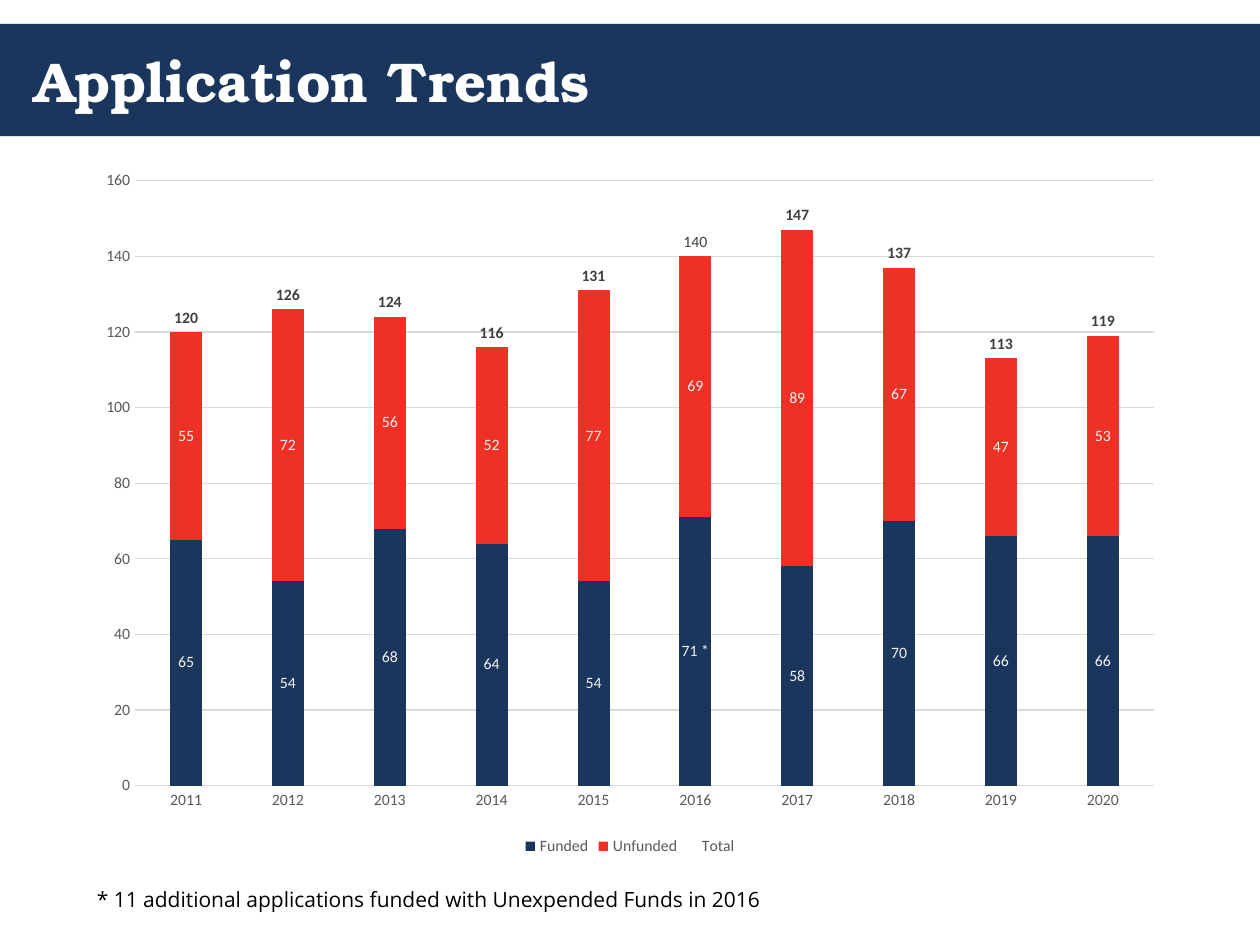
from dataclasses import dataclass

from lxml import etree
from pptx import Presentation
from pptx import util as u
from pptx.chart.data import CategoryChartData
from pptx.dml.color import RGBColor
from pptx.enum import chart as ch, shapes, text
from pptx.oxml import ns


@dataclass(frozen=True)
class Theme:
    """Colours, fonts and type sizes of the slide."""
    navy: str = "1B365D"
    red: str = "EE3124"
    white: str = "FFFFFF"
    black: str = "000000"
    pale: str = "F2F2F2"
    axis: str = "595959"
    total: str = "404040"
    grid: str = "D9D9D9"
    title_font: str = "TeX Gyre Bonum"
    note_font: str = "Open Sans"
    chart_font: str = "Calibri"
    title_size: int = 32
    note_size: int = 12
    chart_size: int = 10
    label_size: int = 9


T = Theme()
YEARS = [str(year) for year in range(2011, 2021)]
FUNDED = [65, 54, 68, 64, 54, 71, 58, 70, 66, 66]
UNFUNDED = [55, 72, 56, 52, 77, 69, 89, 67, 47, 53]
TOTAL = [f + n for f, n in zip(FUNDED, UNFUNDED)]
NOTED = YEARS.index("2016")


def style(font, name, size, color, bold=False):
    """Set the face, size, colour and weight of a font."""
    font.name, font.size, font.bold = name, u.Pt(size), bold
    font.color.rgb = RGBColor.from_string(color)


def rule(line, color):
    """Give a chart line its colour and hairline width."""
    line.color.rgb = RGBColor.from_string(color)
    line.width = u.Pt(0.75)


def write(tf, words, *look):
    """Fill the first paragraph of a text frame with one styled run."""
    p = tf.paragraphs[0]
    p.alignment = text.PP_ALIGN.LEFT
    r = p.add_run()
    r.text = words
    style(r.font, *look)


def add_header(s, x, y, w, h):
    """Place the title over a full-width band."""
    band = s.shapes.add_shape(shapes.MSO_SHAPE.RECTANGLE, x, y, w, h)
    band.shadow.inherit = False
    band.fill.solid()
    band.fill.fore_color.rgb = RGBColor.from_string(T.navy)
    band.line.fill.background()
    title = s.shapes.title
    title._element.addprevious(band._element)
    inset = u.Inches(0.17)
    title.left, title.top, title.width, title.height = x + inset, y, w - 2 * inset, h
    title.text_frame.vertical_anchor = text.MSO_ANCHOR.MIDDLE
    write(title.text_frame, "Application Trends", T.title_font, T.title_size, T.white, True)


def move_last_series_to_line(chart):
    """Turn the last column series into a line on the same axes."""
    bar = chart._chartSpace.find(".//" + ns.qn("c:barChart"))
    ser = bar.findall(ns.qn("c:ser"))[-1]
    for flag in ser.findall(ns.qn("c:invertIfNegative")):
        ser.remove(flag)
    line = bar.makeelement(ns.qn("c:lineChart"))
    bar.addnext(line)
    etree.SubElement(line, ns.qn("c:grouping"), val="standard")
    etree.SubElement(line, ns.qn("c:varyColors"), val="0")
    line.append(ser)
    etree.SubElement(line, ns.qn("c:marker"), val="1")
    for axis in bar.findall(ns.qn("c:axId")):
        etree.SubElement(line, ns.qn("c:axId"), val=axis.get("val"))


def label_series(series, position, color, bold, note=None):
    """Show the values of a series, with special wording for the noted year."""
    labels = series.data_labels
    labels.show_value = True
    labels.position = position
    style(labels.font, T.chart_font, T.label_size, color, bold)
    if note:
        label = series.points[NOTED].data_label
        write(label.text_frame, note, T.chart_font, T.label_size, color)
        label.position = position


def format_axes(chart):
    """Format both axes and the gridlines."""
    for axis in (chart.category_axis, chart.value_axis):
        axis.major_tick_mark = axis.minor_tick_mark = ch.XL_TICK_MARK.NONE
        style(axis.tick_labels.font, T.chart_font, T.label_size, T.axis)
    rule(chart.category_axis.format.line, T.grid)
    values = chart.value_axis
    values.minimum_scale, values.maximum_scale, values.major_unit = 0, 160, 20
    values.format.line.fill.background()
    rule(values.major_gridlines.format.line, T.grid)


def add_trend_chart(s, x, y, w, h):
    """Place stacked columns with totals carried by an unseen line."""
    data = CategoryChartData()
    data.categories = YEARS
    for name, values in (("Funded", FUNDED), ("Unfunded", UNFUNDED), ("Total", TOTAL)):
        data.add_series(name, values)
    chart = s.shapes.add_chart(ch.XL_CHART_TYPE.COLUMN_STACKED, x, y, w, h, data).chart
    move_last_series_to_line(chart)
    style(chart.font, T.chart_font, T.chart_size, T.black)
    chart.has_title = False
    format_axes(chart)

    columns, line = chart.plots
    columns.gap_width, columns.overlap = 219, 100
    columns.vary_by_categories = False
    for series, color, note in zip(columns.series, (T.navy, T.red), ("71 *", None)):
        series.format.fill.solid()
        series.format.fill.fore_color.rgb = RGBColor.from_string(color)
        label_series(series, ch.XL_LABEL_POSITION.CENTER, T.pale, False, note)
    total = line.series[0]
    total.smooth = False
    total.format.line.fill.background()
    total.marker.style = ch.XL_MARKER_STYLE.NONE
    label_series(total, ch.XL_LABEL_POSITION.ABOVE, T.total, True, str(TOTAL[NOTED]))

    chart.has_legend = True
    chart.legend.position = ch.XL_LEGEND_POSITION.BOTTOM
    chart.legend.include_in_layout = False
    style(chart.legend.font, T.chart_font, T.label_size, T.axis)


def add_footnote(s, x, y, w, h):
    """Place the note that explains the starred value."""
    tf = s.shapes.add_textbox(x, y, w, h).text_frame
    tf.word_wrap = True
    tf.auto_size = text.MSO_AUTO_SIZE.SHAPE_TO_FIT_TEXT
    write(tf, "* 11 additional applications funded with Unexpended Funds in 2016",
          T.note_font, T.note_size, T.black)


def main():
    """Build the slide and save it."""
    prs = Presentation()
    prs.slide_width, prs.slide_height = u.Inches(10), u.Inches(7.5)
    s = prs.slides.add_slide(prs.slide_layouts[5])
    margin = u.Inches(0.67)
    add_header(s, 0, u.Inches(0.19), prs.slide_width, u.Inches(0.89))
    add_trend_chart(s, margin, u.Inches(1.25), prs.slide_width - 2 * margin, u.Inches(5.58))
    add_footnote(s, margin, u.Inches(6.99), u.Inches(6.08), u.Inches(0.3))
    prs.save("out.pptx")


if __name__ == "__main__":
    main()
